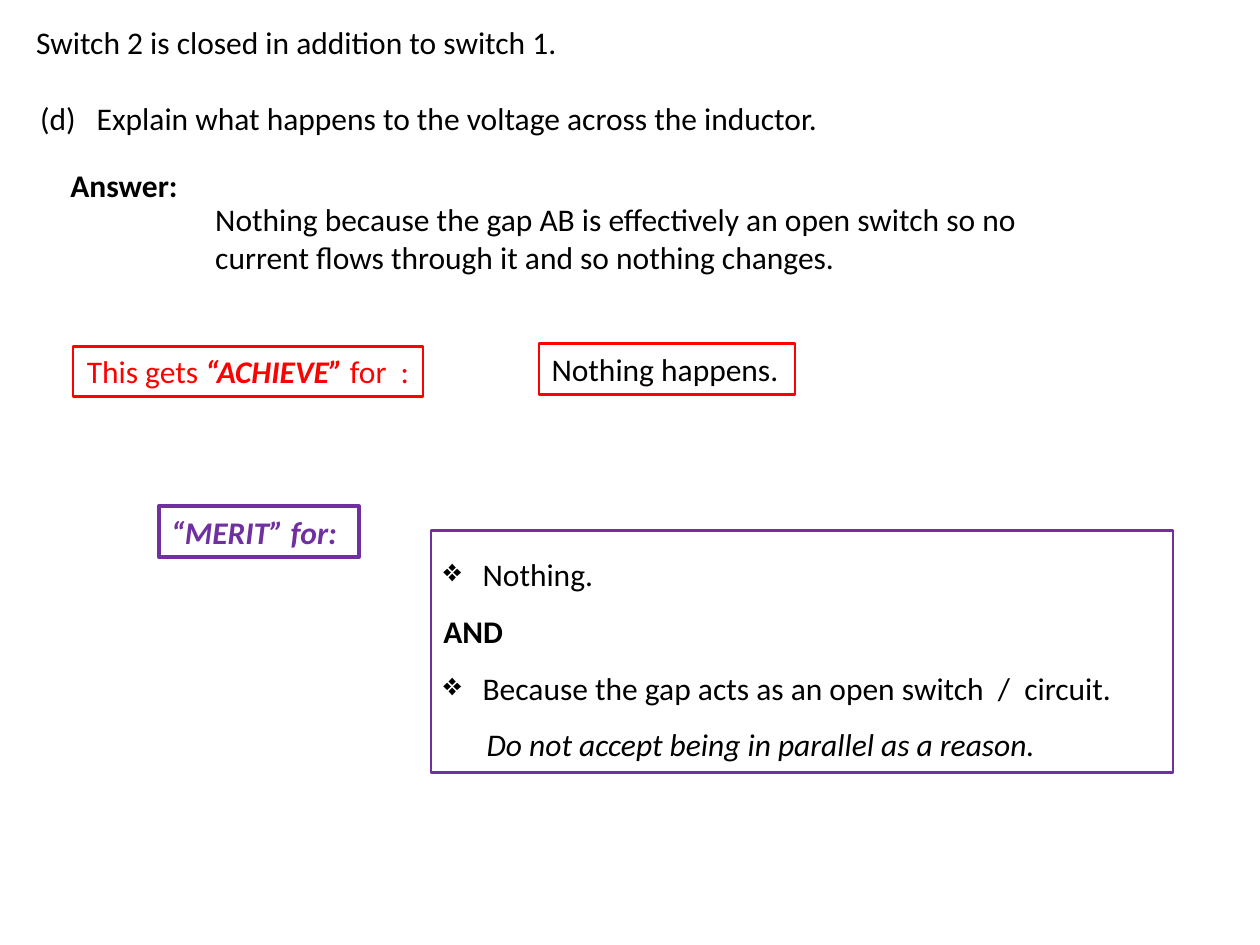
from lxml.etree import SubElement
from pptx import Presentation
from pptx.dml.color import RGBColor
from pptx.enum.text import MSO_AUTO_SIZE as AutoSize, PP_ALIGN as Align
from pptx.oxml.ns import qn
from pptx.util import Cm, Pt

COLORS = {"text": "000000", "achieve": "FF0000", "merit": "7030A0"}
BLANK_LAYOUT = 6
BULLET_INDENT = 0.79
BOLD = {"bold": True}
ITALIC = {"italic": True}
BOLD_ITALIC = BOLD | ITALIC


def color(name):
    return RGBColor.from_string(COLORS[name])


def add_box(slide, left, top, width, height, wrap=True, line=None, weight=1.5):
    """Add a text box, outlined if a line colour is named; return its frame."""
    box = slide.shapes.add_textbox(Cm(left), Cm(top), Cm(width), Cm(height))
    if line:
        box.line.color.rgb = color(line)
        box.line.width = Pt(weight)
    frame = box.text_frame
    frame.word_wrap = wrap
    frame.auto_size = AutoSize.SHAPE_TO_FIT_TEXT
    return frame


def write(paragraph, *runs, ink="text", **layout):
    """Write (text, font format) runs and set paragraph attributes."""
    for name, value in layout.items():
        setattr(paragraph, name, value)
    for text, style in runs:
        run = paragraph.add_run()
        run.text = text
        font = run.font
        for name, value in ({"name": "Calibri", "size": Pt(18)} | style).items():
            setattr(font, name, value)
        font.color.rgb = color(ink)


def indent(paragraph, margin, hanging=0, bullet=None):
    properties = paragraph._p.get_or_add_pPr()
    properties.set("marL", str(Cm(margin)))
    properties.set("indent", str(-Cm(hanging)))
    if bullet:
        SubElement(properties, qn("a:buChar")).set("char", bullet)


def add_question(slide):
    intro = add_box(slide, 0.48, 0.33, 11.15, 1.02, wrap=False)
    write(intro.paragraphs[0], ("Switch 2 is closed in addition to switch 1.", {}))
    question = add_box(slide, 0.56, 1.88, 18.29, 1.02).paragraphs[0]
    write(question, ("(d)\tExplain what happens to the voltage across the inductor.", {}))
    indent(question, 1.14, hanging=1.14)


def add_answer(slide):
    answer = add_box(slide, 4.09, 3.91, 18.21, 1.8)
    write(answer.paragraphs[0], (
        "Nothing because the gap AB is effectively an open switch so no "
        "current flows through it and so nothing changes.", {}))
    label = add_box(slide, 1.17, 3.23, 2.69, 1.02, wrap=False)
    write(label.paragraphs[0], ("Answer:", BOLD))


def add_achieve(slide):
    label = add_box(slide, 1.47, 6.98, 7.06, 1.02, line="achieve")
    write(label.paragraphs[0], ("This gets ", {}), ("“ACHIEVE”", BOLD_ITALIC),
          (" for  :", {}), ink="achieve", alignment=Align.CENTER)
    criterion = add_box(slide, 10.87, 6.93, 5.16, 1.02, wrap=False, line="achieve")
    write(criterion.paragraphs[0], ("Nothing happens.", {}))


def add_merit(slide):
    label = add_box(slide, 3.2, 10.21, 4.04, 1.02, wrap=False, line="merit", weight=2.25)
    write(label.paragraphs[0], ("“MERIT” for:", BOLD_ITALIC), ink="merit")

    criteria = [
        ("Nothing.", {}, (BULLET_INDENT, BULLET_INDENT, "❖")),
        ("AND", BOLD, (0,)),
        ("Because the gap acts as an open switch  /  circuit.", {},
         (BULLET_INDENT, BULLET_INDENT, "❖")),
        ("Do not accept being in parallel as a reason.", ITALIC, (0.87,)),
    ]
    frame = add_box(slide, 8.69, 10.69, 14.96, 4.88, line="merit")
    for number, (text, style, indents) in enumerate(criteria):
        paragraph = frame.add_paragraph() if number else frame.paragraphs[0]
        write(paragraph, (text, style), line_spacing=1.5)
        indent(paragraph, *indents)


def main():
    presentation = Presentation()
    presentation.slide_width = Cm(25.4)
    presentation.slide_height = Cm(19.05)
    slide = presentation.slides.add_slide(presentation.slide_layouts[BLANK_LAYOUT])
    for add_part in (add_question, add_answer, add_achieve, add_merit):
        add_part(slide)
    presentation.save("out.pptx")


if __name__ == "__main__":
    main()
